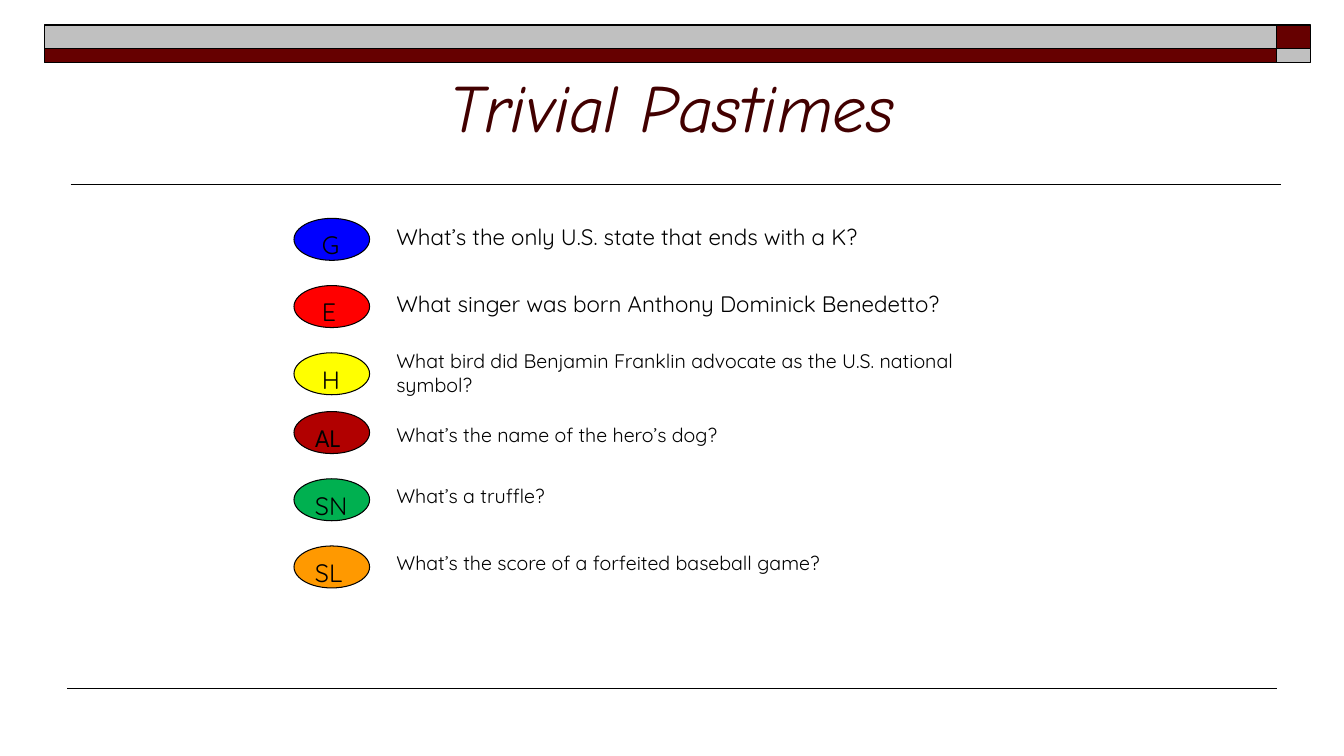
from lxml.etree import SubElement
from pptx import Presentation
from pptx.dml.color import RGBColor
from pptx.enum.shapes import MSO_CONNECTOR as Link, MSO_SHAPE as Shape
from pptx.enum.text import MSO_ANCHOR as Anchor, PP_ALIGN as Align
from pptx.oxml.ns import qn
from pptx.util import Inches, Pt

CELL = Inches(1) / 12
COLS, ROWS = 160, 90
BLACK, WINE, GREY = "000000", "660000", "C0C0C0"
SANS = "Quicksand"

QUIZ = [
    ("G", "0000FF", SANS, 0.8, 26, 26, 74, 16, "What’s the only U.S. state that ends with a K?"),
    ("E", "FF0000", SANS, 0.8, 34, 34, 71, 16, "What singer was born Anthony Dominick Benedetto?"),
    ("H", "FFFF00", SANS, 0.8, 42, 41, 72, 14,
     "What bird did Benjamin Franklin advocate as the U.S. national symbol?"),
    ("AL", "B10000", "League Spartan", 0, 49, 49.8, 85, 14, "What’s the name of the hero’s dog?"),
    ("SN", "00B050", SANS, 0, 57, 57, 78, 14, "What’s a truffle?"),
    ("SL", "FF9900", SANS, 0, 65, 65, 86, 14, "What’s the score of a forfeited baseball game?"),
]


def grid(*cells):
    return [round(c * CELL) for c in cells]


def color(code):
    return RGBColor.from_string(code)


def style(frame, text, size, font=SANS, code=BLACK, align=Align.LEFT, anchor=Anchor.TOP):
    frame.text = text
    frame.word_wrap = True
    frame.vertical_anchor = anchor
    line = frame.paragraphs[0]
    line.alignment = align
    face = line.runs[0].font
    face.size, face.name = Pt(size), font
    face.color.rgb = color(code)
    return face


def add_form(slide, kind, box, fill, width):
    form = slide.shapes.add_shape(kind, *grid(*box))
    form.shadow.inherit = False
    form.fill.solid()
    form.fill.fore_color.rgb = color(fill)
    form.line.color.rgb = color(BLACK)
    form.line.width = Pt(width)
    return form


def add_rule(slide, left, right, row, width):
    rule = slide.shapes.add_connector(Link.STRAIGHT, *grid(left, row, right, row))
    rule.line.color.rgb = color(BLACK)
    rule.line.width = Pt(width)
    SubElement(rule.element.spPr, qn("a:effectLst"))


def add_text(slide, box, text, size, **look):
    area = slide.shapes.add_textbox(*grid(*box))
    return style(area.text_frame, text, size, **look)


def add_badge(slide, row, label, fill, font, indent):
    badge = add_form(slide, Shape.OVAL, (35, row, 9, 5), fill, 0.75)
    frame = badge.text_frame
    style(frame, label, 18, font)
    frame.margin_left, frame.margin_right = grid(1.2 + indent, 0)


def add_band(slide):
    for top, high, fills in [(3, 2.75, (GREY, WINE)), (5.75, 1.7, (WINE, GREY))]:
        for left, wide, fill in zip((5.3, 152), (146.7, 4), fills):
            add_form(slide, Shape.RECTANGLE, (left, top, wide, high), fill, 1)


def main():
    deck = Presentation()
    deck.slide_width, deck.slide_height = grid(COLS, ROWS)
    slide = deck.slides.add_slide(deck.slide_layouts[6])
    add_rule(slide, 8.4, 152.5, 22, 1)
    add_band(slide)
    add_rule(slide, 8, 152, 82, 0.75)
    title = add_text(slide, (26, 3, 108, 15), "Trivial Pastimes", 48, font="Comic Neue",
                     code="420000", align=Align.CENTER, anchor=Anchor.BOTTOM)
    title.italic = True
    for label, fill, font, indent, row, top, wide, size, ask in QUIZ:
        add_badge(slide, row, label, fill, font, indent)
        add_text(slide, (46, top, wide, 4.4), ask, size)
    deck.save("out.pptx")


if __name__ == "__main__":
    main()
